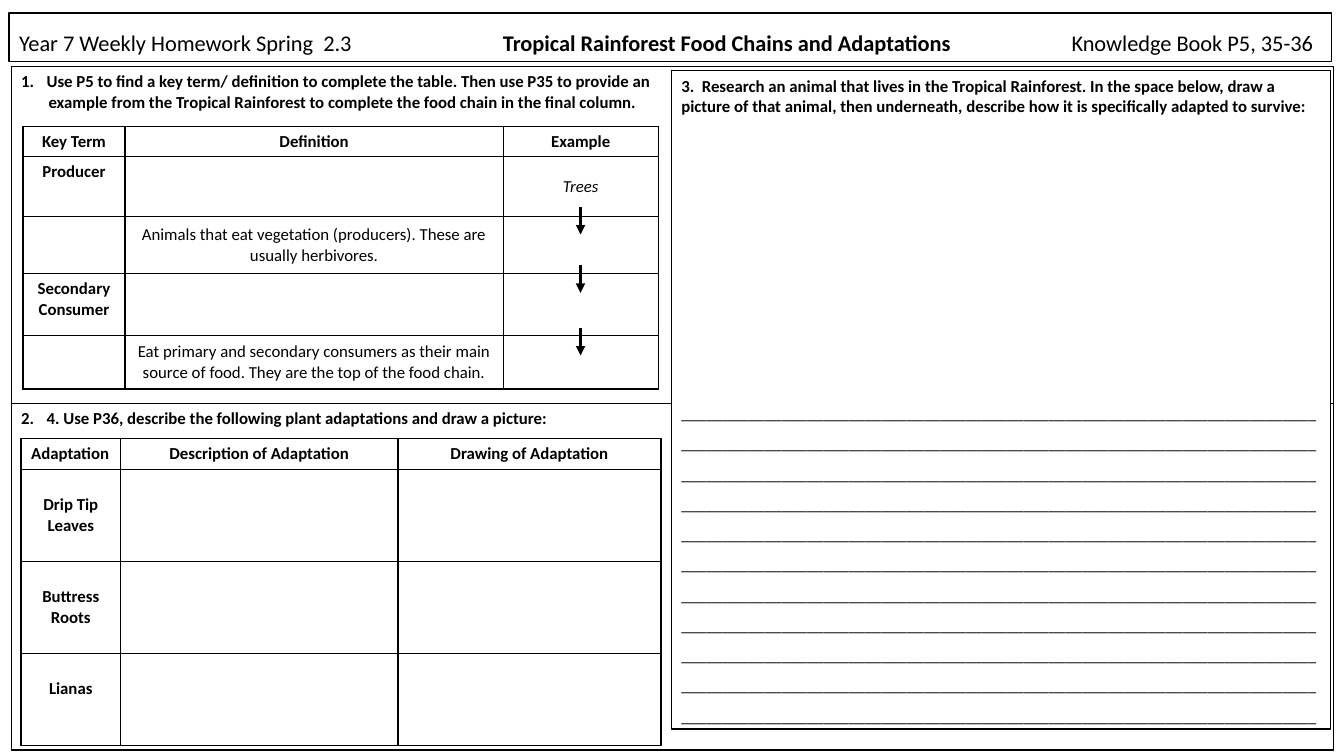
from pptx import Presentation
from pptx.dml.color import RGBColor
from pptx.enum.shapes import MSO_CONNECTOR as LINK, MSO_SHAPE as SHAPE
from pptx.enum.text import MSO_ANCHOR as ANCHOR, MSO_AUTO_SIZE as FIT, PP_ALIGN as ALIGN
from pptx.oxml.ns import qn
from pptx.util import Cm, Pt
from lxml.etree import SubElement as Sub

BLACK = RGBColor(0, 0, 0)
WHITE = RGBColor(255, 255, 255)
FONT = "Calibri"

# Content
TITLE = [("Year 7 Weekly Homework Spring  2.3\t", False),
         ("Tropical Rainforest Food Chains and Adaptations\t", True),
         ("Knowledge Book P5, 35-36", False)]
TABS = [12.19, 26.52]

TASKS = [
    ["Use P5 to find a key term/ definition to complete the table. Then use P35 to provide an",
     "example from the Tropical Rainforest to complete the food chain in the final column."],
    ["4. Use P36, describe the following plant adaptations and draw a picture:"],
]

TERMS = [
    ["Key Term", "Definition", "Example"],
    ["Producer", "", "Trees"],
    ["", "Animals that eat vegetation (producers). These are usually herbivores.", ""],
    ["Secondary Consumer", "", ""],
    ["", "Eat primary and secondary consumers as their main source of food. "
         "They are the top of the food chain.", ""],
]

PLANTS = [
    ["Adaptation", "Description of Adaptation", "Drawing of Adaptation"],
    ["Drip Tip Leaves", "", ""],
    ["Buttress Roots", "", ""],
    ["Lianas", "", ""],
]

RESEARCH = ("3.  Research an animal that lives in the Tropical Rainforest. In the space below, "
            "draw a picture of that animal, then underneath, describe how it is specifically "
            "adapted to survive:")
RULES, DASHES = 11, 76

# Places in cm
ARROW_X, ARROW_LEN = 14.63, 0.7
ARROWS = [5.21, 6.68, 8.26]


def write(para, text, size=12, bold=False, italic=False):
    run = para.add_run()
    run.text = text
    font = run.font
    font.name, font.size = FONT, Pt(size)
    font.bold, font.italic = bold, italic
    font.color.rgb = BLACK


def outline(shape):
    shape.shadow.inherit = False
    shape.fill.solid()
    shape.fill.fore_color.rgb = WHITE
    shape.line.color.rgb = BLACK
    shape.line.width = Pt(1)


def border(cell):
    props = cell._tc.get_or_add_tcPr()
    for side in ("lnL", "lnR", "lnT", "lnB"):
        edge = Sub(props, qn("a:" + side), w=str(Pt(1)))
        fill = Sub(edge, qn("a:solidFill"))
        Sub(fill, qn("a:srgbClr"), val=str(BLACK))


def grid(left, top, cols, rows):
    frame = slide.shapes.add_table(len(rows), len(cols), Cm(left), Cm(top),
                                   Cm(sum(cols)), Cm(sum(rows)))
    table = frame.table
    table.first_row = table.horz_banding = False
    for col, wide in zip(table.columns, cols):
        col.width = Cm(wide)
    for row, high in zip(table.rows, rows):
        row.height = Cm(high)
    for cell in table.iter_cells():
        border(cell)
    return table


def fill_in(table, data):
    for r, line in enumerate(data):
        for c, text in enumerate(line):
            cell = table.cell(r, c)
            cell.fill.solid()
            cell.fill.fore_color.rgb = WHITE
            cell.vertical_anchor = ANCHOR.MIDDLE if c else ANCHOR.TOP
            para = cell.text_frame.paragraphs[0]
            para.alignment = ALIGN.CENTER
            para.font.size = Pt(12)
            if text:
                write(para, text, bold=r == 0 or c == 0, italic=text == "Trees")


deck = Presentation()
deck.slide_width, deck.slide_height = Cm(33.87), Cm(19.05)
slide = deck.slides.add_slide(deck.slide_layouts[5])

# Title bar
title = slide.shapes.title
title.left, title.top, title.width, title.height = Cm(0.23), Cm(0.33), Cm(33.32), Cm(1.22)
title.fill.solid()
title.fill.fore_color.rgb = WHITE
title.line.color.rgb = BLACK
title.line.width = Pt(1)
text = title.text_frame
text.auto_size = FIT.NONE
text.vertical_anchor = ANCHOR.BOTTOM
head = text.paragraphs[0]
head.alignment = ALIGN.LEFT
head.line_spacing = 0.9
stops = Sub(head._p.get_or_add_pPr(), qn("a:tabLst"))
for stop in TABS:
    Sub(stops, qn("a:tab"), pos=str(Cm(stop)), algn="l")
for part, bold in TITLE:
    write(head, part, 16, bold)

# Page frame with the numbered tasks
page = grid(0.28, 1.68, [33.32], [8.48, 8.74])
for num, lines in enumerate(TASKS):
    cell = page.cell(num, 0)
    cell.fill.background()
    for i, line in enumerate(lines):
        para = cell.text_frame.paragraphs[0] if i == 0 else cell.text_frame.add_paragraph()
        props = para._p.get_or_add_pPr()
        props.set("marL", str(Cm(0.69 if i else 0.64)))
        props.set("indent", str(0 if i else -Cm(0.64)))
        if i == 0:
            Sub(props, qn("a:buFont"), typeface="+mj-lt")
            Sub(props, qn("a:buAutoNum"), type="arabicPeriod", startAt=str(num + 1))
        write(para, line, bold=True)

# Plant adaptations
plants = grid(0.53, 11.05, [2.51, 6.99, 6.63], [0.78] + [2.32] * 3)
fill_in(plants, PLANTS)
plants.cell(0, 0).text_frame.paragraphs[0].alignment = ALIGN.LEFT
for r in range(1, len(PLANTS)):
    plants.cell(r, 0).margin_top = Cm(0.64)

# Food chain terms
fill_in(grid(0.58, 3.18, [2.57, 9.53, 3.91], [0.76, 1.5, 1.45, 1.55, 1.35]), TERMS)

# Food chain arrows
for y in ARROWS:
    arrow = slide.shapes.add_connector(LINK.STRAIGHT, Cm(ARROW_X), Cm(y),
                                       Cm(ARROW_X), Cm(y + ARROW_LEN))
    arrow.line.color.rgb = BLACK
    arrow.line.width = Pt(2.25)
    Sub(arrow.line._get_or_add_ln(), qn("a:tailEnd"), type="triangle")
    Sub(arrow._element.spPr, qn("a:effectLst"))

# Research box with writing lines
box = slide.shapes.add_shape(SHAPE.RECTANGLE, Cm(16.92), Cm(1.78), Cm(16.61), Cm(16.59))
outline(box)
text = box.text_frame
text.word_wrap = True
text.vertical_anchor = ANCHOR.TOP
para = text.paragraphs[0]
para.alignment = ALIGN.LEFT
write(para, RESEARCH, bold=True)
for i in range(RULES):
    para = text.add_paragraph()
    para.alignment = ALIGN.LEFT
    if i == 0:
        para.space_before = Pt(205)
    else:
        para.line_spacing = 1.5
    write(para, "_" * DASHES)

deck.save("out.pptx")
